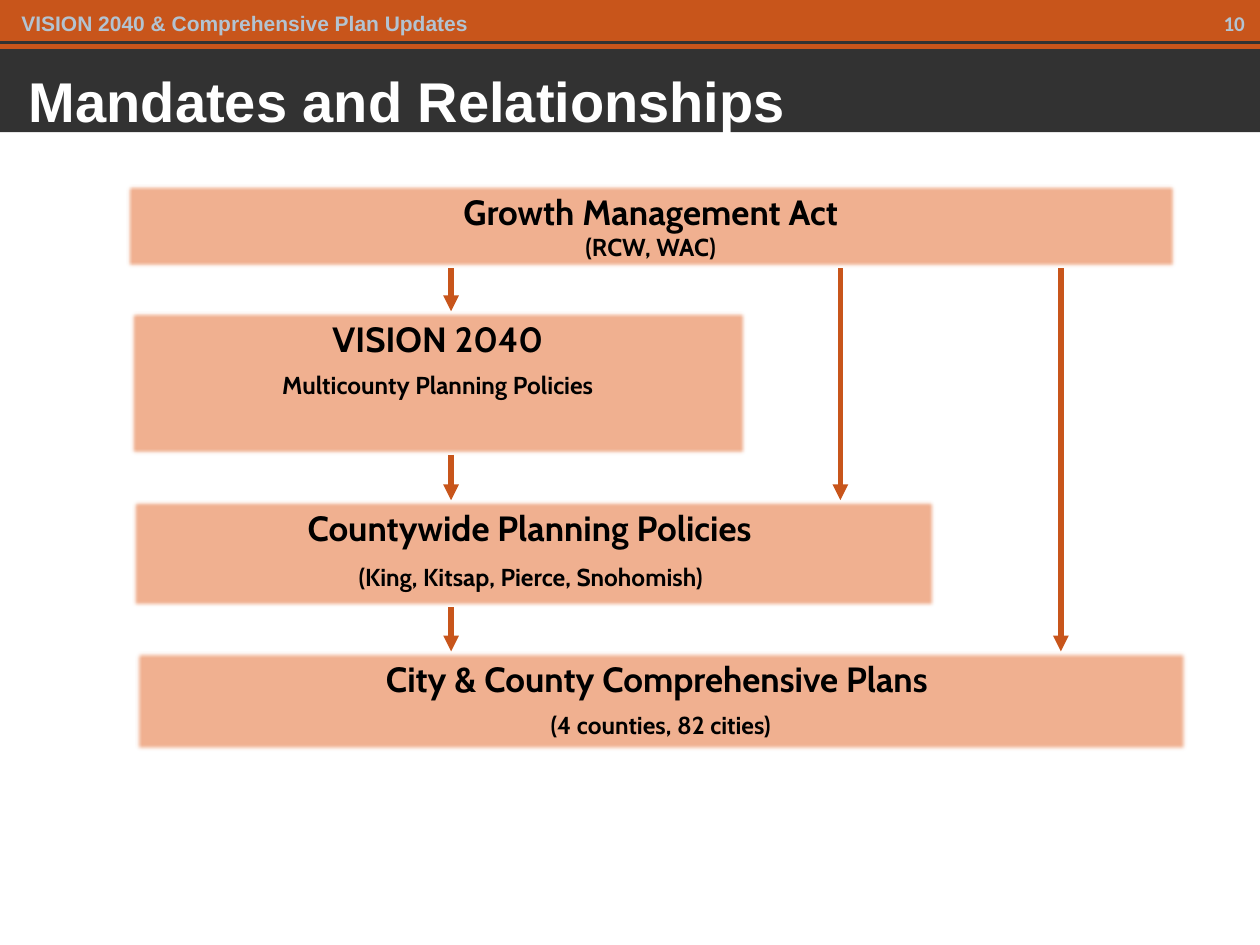
from lxml import etree
from pptx import Presentation
from pptx.dml.color import RGBColor
from pptx.enum import shapes, text
from pptx.oxml.ns import qn
from pptx.util import Inches, Pt

ORANGE = RGBColor(0xC8, 0x55, 0x1B)
PEACH = RGBColor(0xF0, 0xB0, 0x90)
DARK = RGBColor(0x32, 0x32, 0x32)
MIST = RGBColor(0xB3, 0xC3, 0xD1)
WHITE = RGBColor(0xFF, 0xFF, 0xFF)
BLACK = RGBColor(0, 0, 0)


def add_run(p, words, size, font="Arial", color=BLACK):
    r = p.add_run()
    r.text = words
    r.font.size, r.font.name, r.font.bold = Pt(size), font, True
    r.font.color.rgb = color


def add_rect(s, box, fill):
    sp = s.shapes.add_shape(shapes.MSO_SHAPE.RECTANGLE, *map(Inches, box))
    sp.shadow.inherit = False
    sp.fill.solid()
    sp.fill.fore_color.rgb = fill
    sp.line.fill.background()
    return sp


def add_line(s, start, end, color, width, arrow=False):
    cx = s.shapes.add_connector(shapes.MSO_CONNECTOR.STRAIGHT, *map(Inches, start + end))
    cx.line.color.rgb = color
    cx.line.width = Pt(width)
    if arrow:
        etree.SubElement(cx.line._get_or_add_ln(), qn("a:tailEnd"), type="triangle")
    etree.SubElement(cx._element.spPr, qn("a:effectLst"))


def add_label(s, box, words, font="Arial", align=text.PP_ALIGN.LEFT):
    tf = s.shapes.add_textbox(*map(Inches, box)).text_frame
    tf.word_wrap = True
    tf.margin_left = tf.margin_right = tf.margin_top = tf.margin_bottom = 0
    p = tf.paragraphs[0]
    p.alignment = align
    add_run(p, words, 12, font, MIST)


def add_header(s, left, top, width):
    add_rect(s, (left, top, width, 0.41), ORANGE)
    add_rect(s, (left, top + 0.39, width, 0.66), DARK)
    add_line(s, (left, top + 0.34), (left + width, top + 0.34), DARK, 1.5)
    add_label(s, (left + 0.17, top + 0.08, 7.56, 0.2), "VISION 2040 & Comprehensive Plan Updates")
    add_label(s, (left + width - 0.79, top + 0.08, 0.67, 0.26), "10", "Calibri", text.PP_ALIGN.RIGHT)


def add_title(s, box, words):
    sp = s.shapes.title
    sp.left, sp.top, sp.width, sp.height = map(Inches, box)
    s.shapes._spTree.append(sp._element)
    tf = sp.text_frame
    tf.auto_size = text.MSO_AUTO_SIZE.NONE
    tf.vertical_anchor = text.MSO_ANCHOR.MIDDLE
    p = tf.paragraphs[0]
    p.alignment = text.PP_ALIGN.LEFT
    add_run(p, words, 32, color=WHITE)


def add_level(s, box, heading, detail, gap):
    sp = add_rect(s, box, PEACH)
    sp.line.color.rgb = ORANGE
    sp.line.width = Pt(0.75)
    effects = sp._element.spPr.find(qn("a:effectLst"))
    etree.SubElement(effects, qn("a:softEdge"), rad=str(Pt(2.5)))
    tf = sp.text_frame
    tf.word_wrap = True
    tf.vertical_anchor = text.MSO_ANCHOR.TOP
    p = tf.paragraphs[0]
    p.alignment = text.PP_ALIGN.CENTER
    add_run(p, heading, 20, "Cabin")
    if gap:
        p = tf.add_paragraph()
        p.alignment = text.PP_ALIGN.CENTER
        p.space_before = Pt(gap)
    else:
        p.add_line_break()
    add_run(p, detail, 14, "Cabin")


def add_hierarchy(s, left, top):
    levels = [
        (0, 0, 8.33, 0.67, "Growth Management Act", "(RCW, WAC)", 0),
        (0.03, 1.01, 4.89, 1.14, "VISION 2040", "Multicounty Planning Policies", 6),
        (0.05, 2.51, 6.37, 0.85, "Countywide Planning Policies ",
         "(King, Kitsap, Pierce, Snohomish) ", 8),
        (0.07, 3.71, 8.35, 0.79, "City & County Comprehensive Plans ",
         "(4 counties, 82 cities)", 6),
    ]
    for x, y, w, h, heading, detail, gap in levels:
        add_level(s, (left + x, top + y, w, h), heading, detail, gap)
    arrows = [(2.58, 0, 1), (2.58, 1, 2), (2.58, 2, 3), (5.67, 0, 2), (7.42, 0, 3)]
    for x, upper, lower in arrows:
        start = levels[upper][1] + levels[upper][3]
        end = levels[lower][1]
        add_line(s, (left + x, top + start), (left + x, top + end), ORANGE, 3, arrow=True)


def main():
    prs = Presentation()
    prs.slide_width, prs.slide_height = Inches(10), Inches(7.5)
    s = prs.slides.add_slide(prs.slide_layouts[5])
    add_header(s, 0, 0, 10)
    add_title(s, (0.13, 0.42, 7.7, 0.75), "Mandates and Relationships")
    add_hierarchy(s, 1, 1.46)
    prs.save("out.pptx")


if __name__ == "__main__":
    main()
